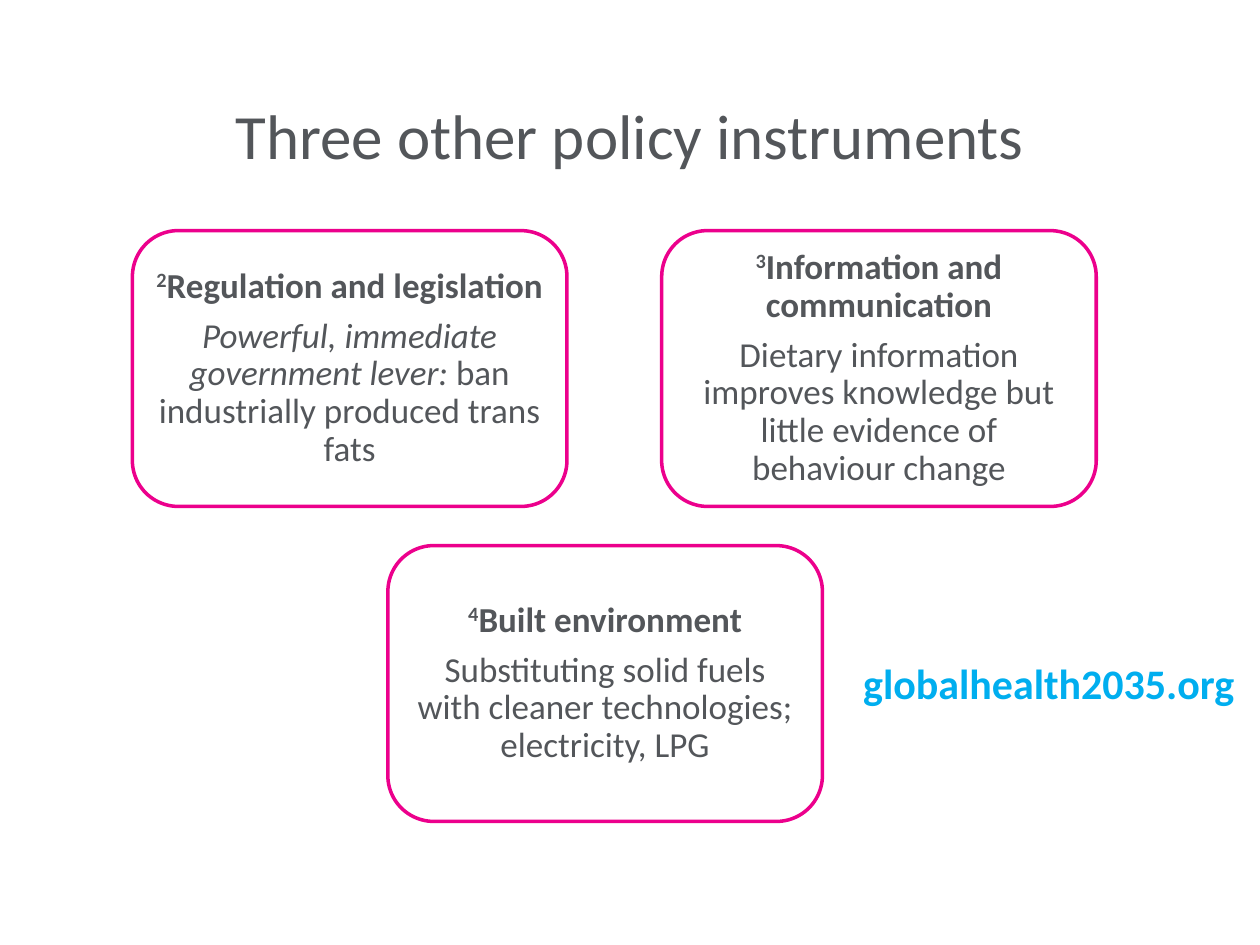
from dataclasses import dataclass

from pptx import Presentation
from pptx.dml.color import RGBColor
from pptx.enum.shapes import MSO_SHAPE
from pptx.enum.text import MSO_ANCHOR, MSO_AUTO_SIZE, PP_ALIGN
from pptx.util import Cm, Pt

GREY, PINK, BLUE, WHITE = "53565A", "EC008C", "00AEEF", "FFFFFF"
CARD_W, CARD_H, INSET = 8.76, 5.56, 0.2
TOP_ROW, BOTTOM_ROW = 4.65, 11.0


@dataclass
class Card:
    left: float
    top: float
    number: str
    heading: str
    body: str
    lead: str = ""


CARDS = [
    Card(2.67, TOP_ROW, "2", "Regulation and legislation",
         "ban industrially produced trans fats",
         lead="Powerful, immediate government lever: "),
    Card(13.34, TOP_ROW, "3", "Information and communication",
         "Dietary information improves knowledge but little evidence of "
         "behaviour change"),
    Card(7.82, BOTTOM_ROW, "4", "Built environment",
         "Substituting solid fuels with cleaner technologies; "
         "electricity, LPG"),
]


def rgb(value: str) -> RGBColor:
    return RGBColor.from_string(value)


def set_attrs(obj, values: dict) -> None:
    for name, value in values.items():
        setattr(obj, name, value)


def add_run(p, text: str, size: float, color: str = GREY, **style):
    r = p.add_run()
    r.text = text
    set_attrs(r.font, {"name": "Calibri", "size": Pt(size), **style})
    r.font.color.rgb = rgb(color)
    return r


def add_card(slide, card: Card) -> None:
    sp = slide.shapes.add_shape(
        MSO_SHAPE.ROUNDED_RECTANGLE,
        Cm(card.left), Cm(card.top), Cm(CARD_W), Cm(CARD_H))
    sp.shadow.inherit = False
    sp.fill.solid()
    sp.fill.fore_color.rgb = rgb(WHITE)
    sp.line.color.rgb = rgb(PINK)
    sp.line.width = Pt(2)

    tf = sp.text_frame
    set_attrs(tf, {"word_wrap": True, "vertical_anchor": MSO_ANCHOR.MIDDLE})
    set_attrs(tf, {f"margin_{side}": Cm(INSET)
                   for side in ("left", "top", "right", "bottom")})
    heading, body = tf.paragraphs[0], tf.add_paragraph()
    for p in (heading, body):
        set_attrs(p, {"alignment": PP_ALIGN.CENTER, "line_spacing": 0.9,
                      "space_after": Pt(7)})

    # Superscript number, then the heading
    number = add_run(heading, card.number, 20, bold=True)
    number.font._element.set("baseline", "30000")
    add_run(heading, card.heading, 20, bold=True)

    if card.lead:
        add_run(body, card.lead, 20, italic=True)
    add_run(body, card.body, 20)


def main() -> None:
    prs = Presentation()
    set_attrs(prs, {"slide_width": Cm(25.4), "slide_height": Cm(19.05)})
    slide = prs.slides.add_slide(prs.slide_layouts[5])

    # Title
    title = slide.shapes.title
    set_attrs(title, {"left": Cm(1.27), "top": Cm(0.76),
                      "width": Cm(22.86), "height": Cm(3.89)})
    title.text_frame.vertical_anchor = MSO_ANCHOR.MIDDLE
    p = title.text_frame.paragraphs[0]
    p.alignment = PP_ALIGN.CENTER
    add_run(p, "Three other policy instruments", 36)

    # Policy instruments
    for card in CARDS:
        add_card(slide, card)

    # Web address
    box = slide.shapes.add_textbox(Cm(17.15), Cm(13.13), Cm(8.03), Cm(1.27))
    tf = box.text_frame
    set_attrs(tf, {"word_wrap": True, "vertical_anchor": MSO_ANCHOR.MIDDLE,
                   "auto_size": MSO_AUTO_SIZE.SHAPE_TO_FIT_TEXT})
    add_run(tf.paragraphs[0], "globalhealth2035.org", 24, BLUE, bold=True)

    prs.save("out.pptx")


if __name__ == "__main__":
    main()
